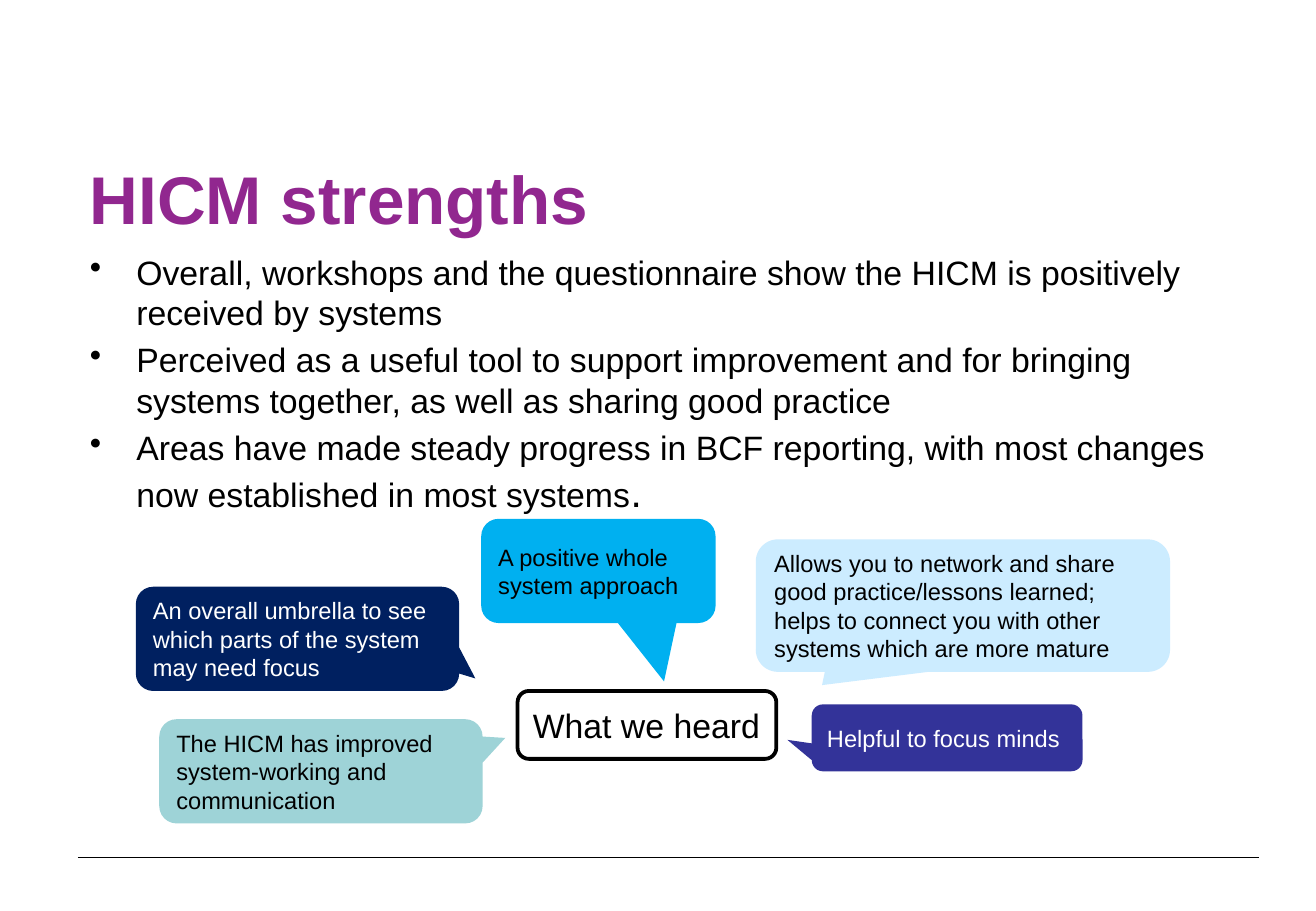
import dataclasses

import lxml.etree
import pptx
import pptx.dml.color
import pptx.enum.shapes
import pptx.enum.text
import pptx.oxml.ns
import pptx.util

Cm = pptx.util.Cm
Pt = pptx.util.Pt
Kind = pptx.enum.shapes.MSO_SHAPE
Anchor = pptx.enum.text.MSO_ANCHOR


@dataclasses.dataclass(frozen=True)
class Theme:
    font: str = "Arial"
    black: str = "000000"
    white: str = "FFFFFF"
    plum: str = "91278F"
    teal: str = "9ED3D7"
    violet: str = "333399"
    sky: str = "00B0F0"
    navy: str = "002060"
    pale: str = "CCECFF"
    title: int = 40
    stop: int = 24
    body: int = 20
    quote: int = 14


THEME = Theme()

POINTS = [
    "Overall, workshops and the questionnaire show the HICM is positively received by systems",
    "Perceived as a useful tool to support improvement and for bringing systems together, "
    "as well as sharing good practice",
    "Areas have made steady progress in BCF reporting, with most changes "
    "now established in most systems",
]

QUOTES = [
    ("The HICM has improved system-working and communication",
     (3.33, 15.04, 6.76, 2.18), (0.57, -0.32), THEME.teal, THEME.black),
    ("Helpful to focus minds",
     (16.97, 14.73, 5.66, 1.4), (-0.59, 0.03), THEME.violet, THEME.white),
    ("A positive whole system approach",
     (10.06, 10.85, 4.9, 2.18), (0.28, 1.06), THEME.sky, THEME.black),
    ("An overall umbrella to see which parts of the system may need focus",
     (2.84, 12.27, 6.76, 2.18), (0.55, 0.38), THEME.navy, THEME.white),
    ("Allows you to network and share good practice/lessons learned; "
     "helps to connect you with other systems which are more mature",
     (15.8, 11.28, 8.66, 2.77), (-0.34, 0.6), THEME.pale, THEME.black),
]


def tint(code):
    return pptx.dml.color.RGBColor.from_string(code)


def place(box):
    return [Cm(side) for side in box]


def add_dot(para):
    props = para._p.get_or_add_pPr()
    props.set("marL", str(Cm(0.97)))
    props.set("indent", str(-Cm(0.97)))
    dot = lxml.etree.SubElement(props, pptx.oxml.ns.qn("a:buChar"))
    dot.set("char", "•")


def write(para, text, size, color=THEME.black, bold=False):
    para.alignment = pptx.enum.text.PP_ALIGN.LEFT
    run = para.add_run()
    run.text = text
    run.font.name = THEME.font
    run.font.size = Pt(size)
    run.font.bold = bold
    run.font.color.rgb = tint(color)


def set_frame(shape, anchor=Anchor.MIDDLE, wrap=True):
    frame = shape.text_frame
    frame.word_wrap = wrap
    frame.vertical_anchor = anchor
    return frame


def add_title(slide, text):
    box = slide.shapes.add_textbox(*place((1.63, 3.33, 24.77, 1.6)))
    write(set_frame(box).paragraphs[0], text, THEME.title, color=THEME.plum, bold=True)


def add_list(slide, points):
    box = slide.shapes.add_textbox(*place((1.63, 5.13, 24.77, 11.89)))
    frame = set_frame(box, anchor=Anchor.TOP)
    for rank, point in enumerate(points):
        para = frame.add_paragraph() if rank else frame.paragraphs[0]
        add_dot(para)
        if rank:
            para.space_before = Pt(4)
        write(para, point, THEME.body)
    write(para, ".", THEME.stop)


def add_quote(slide, text, box, tip, fill, color):
    shape = slide.shapes.add_shape(Kind.ROUNDED_RECTANGULAR_CALLOUT, *place(box))
    shape.shadow.inherit = False
    shape.adjustments[0], shape.adjustments[1] = tip
    shape.fill.solid()
    shape.fill.fore_color.rgb = tint(fill)
    shape.line.fill.background()
    write(set_frame(shape).paragraphs[0], text, THEME.quote, color=color)


def add_hub(slide, text):
    shape = slide.shapes.add_shape(Kind.ROUNDED_RECTANGLE, *place((10.82, 14.45, 5.41, 1.42)))
    shape.shadow.inherit = False
    shape.fill.background()
    shape.line.color.rgb = tint(THEME.black)
    shape.line.width = Pt(2.25)
    write(set_frame(shape, wrap=False).paragraphs[0], text, THEME.body)


def add_rule(slide):
    ends = place((1.63, 17.93, 26.31, 17.93))
    rule = slide.shapes.add_connector(pptx.enum.shapes.MSO_CONNECTOR.STRAIGHT, *ends)
    rule.line.color.rgb = tint(THEME.black)
    rule.line.width = Pt(0.75)
    props = rule._element.spPr
    lxml.etree.SubElement(props, pptx.oxml.ns.qn("a:effectLst"))


def main():
    deck = pptx.Presentation()
    deck.slide_width, deck.slide_height = Cm(27.51), Cm(19.05)
    slide = deck.slides.add_slide(deck.slide_layouts[6])
    add_rule(slide)
    add_title(slide, "HICM strengths")
    add_list(slide, POINTS)
    add_hub(slide, "What we heard")
    for quote in QUOTES:
        add_quote(slide, *quote)
    deck.save("out.pptx")


if __name__ == "__main__":
    main()
